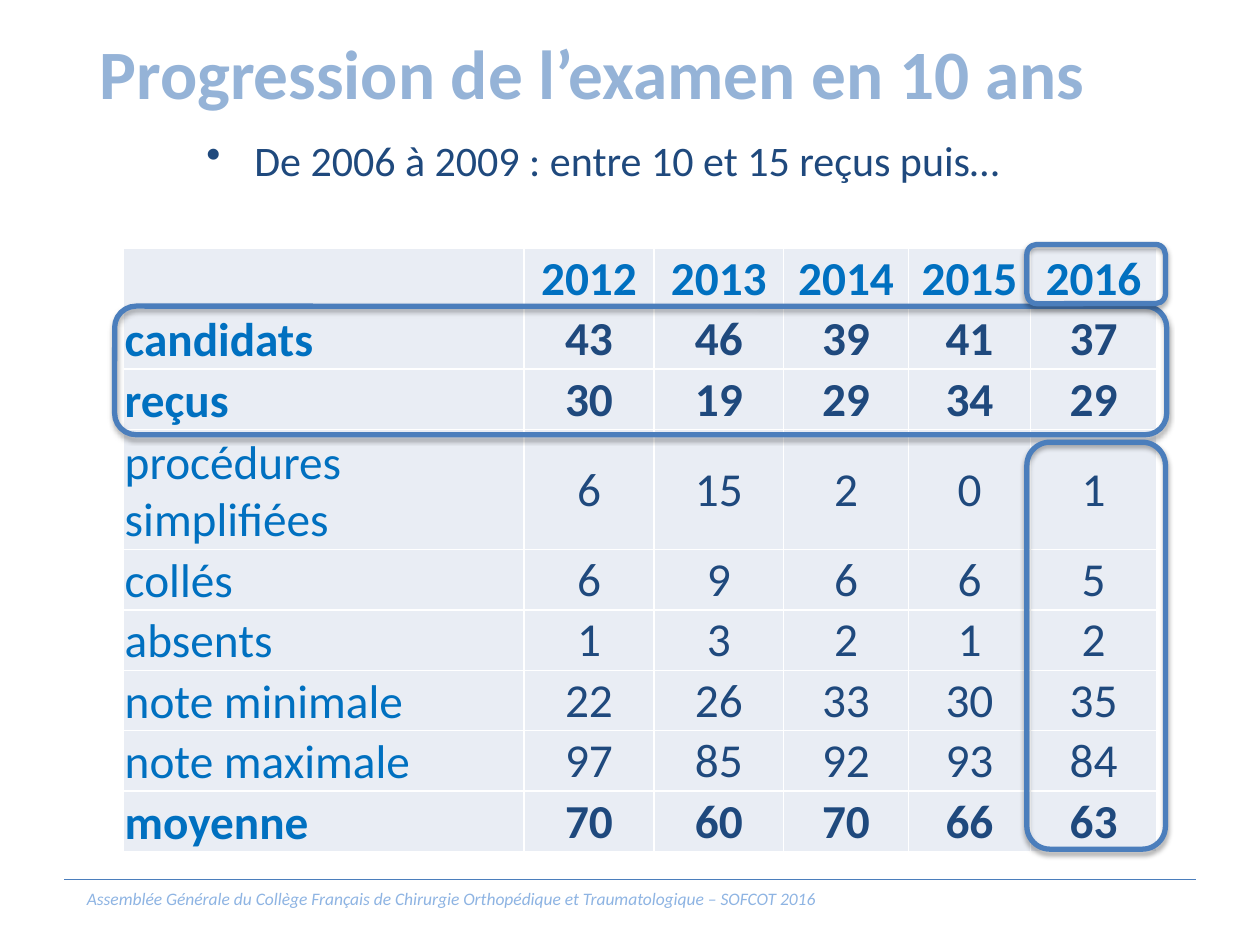
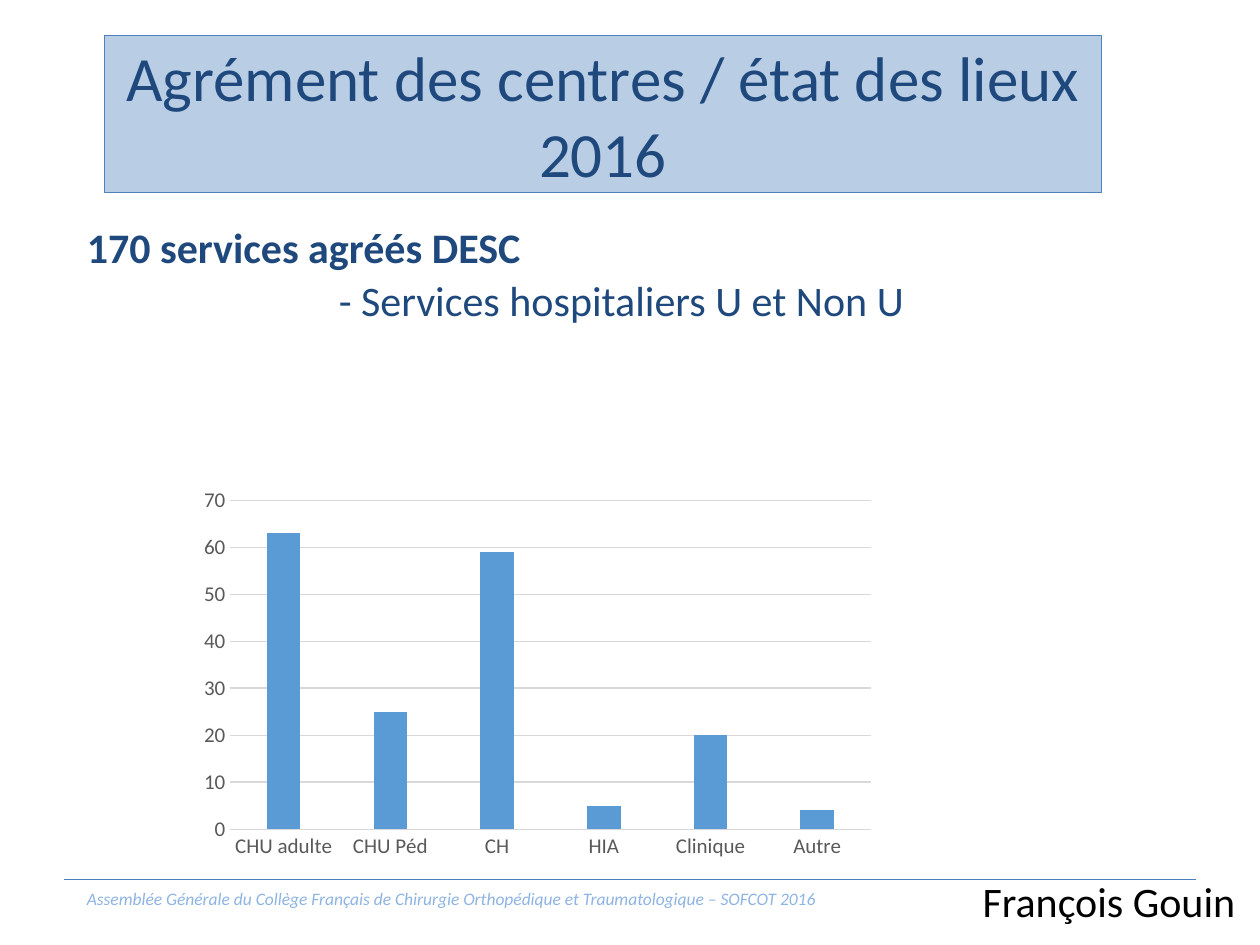
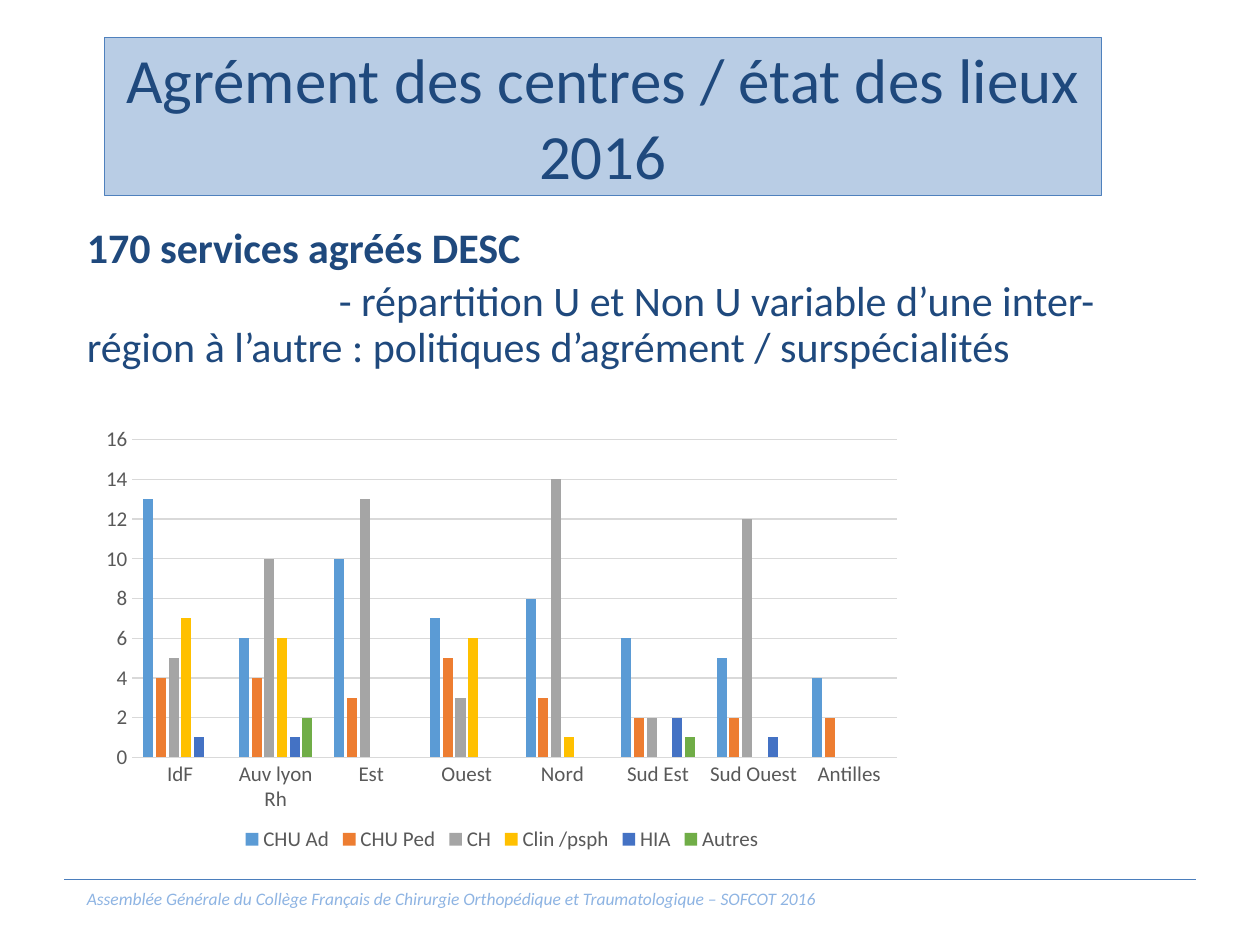
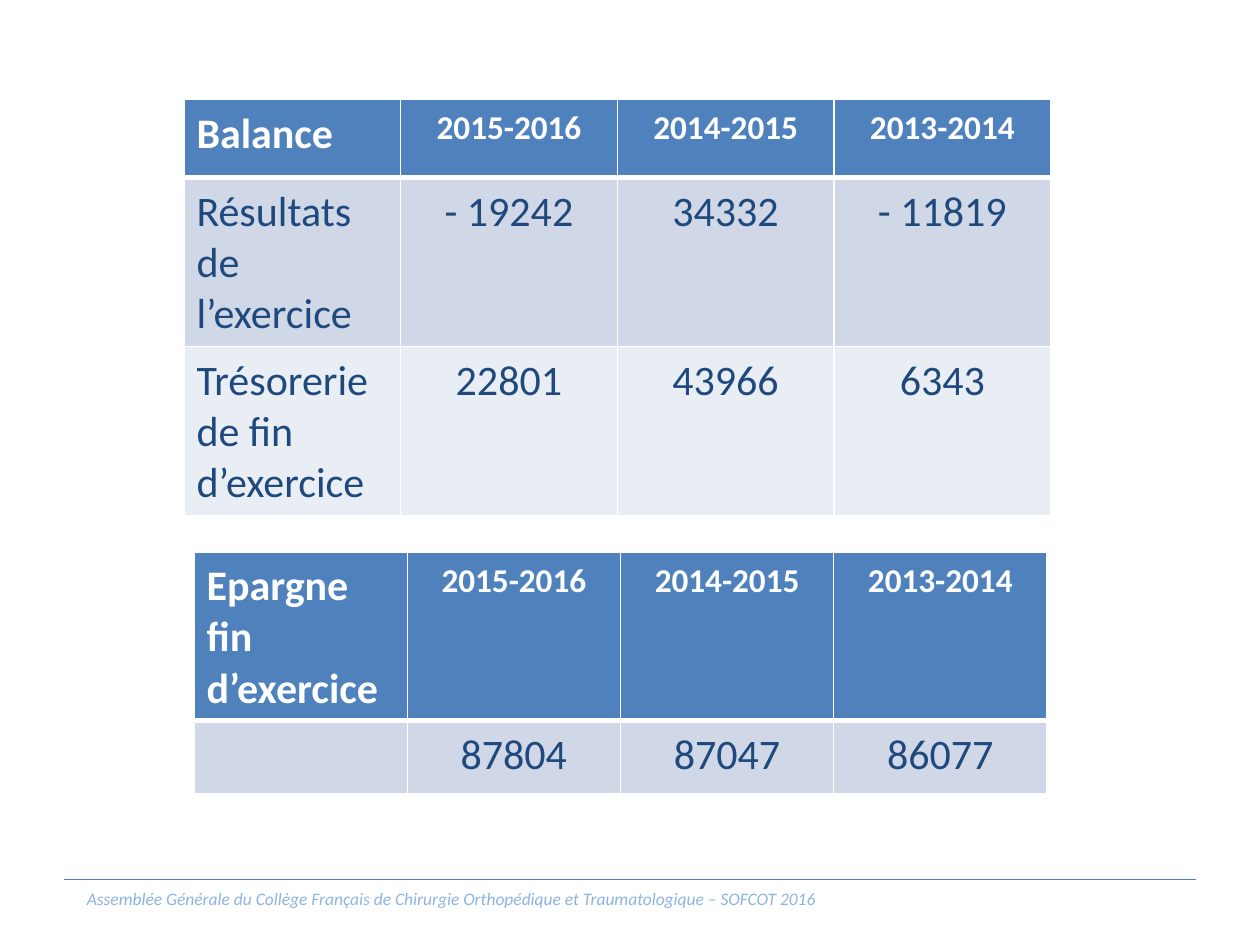
from lxml import etree
from pptx import Presentation
from pptx.chart.data import CategoryChartData
from pptx.dml.color import RGBColor
from pptx.enum.chart import XL_CHART_TYPE as ChartType, XL_LEGEND_POSITION as LegendPosition
from pptx.enum.chart import XL_TICK_MARK as TickMark
from pptx.enum.shapes import MSO_CONNECTOR as Connector, MSO_SHAPE as Shape
from pptx.enum.text import MSO_ANCHOR as Anchor, PP_ALIGN as Align
from pptx.oxml import parse_xml
from pptx.oxml.ns import nsdecls, qn
from pptx.util import Inches, Pt

FONT = "Calibri"
COLORS = {
    "navy": "1F497D", "title": "95B3D7", "footer": "8EB4E3", "rule": "4B7EBC",
    "band": "B9CDE5", "accent": "4F81BD", "label": "0070C0", "white": "FFFFFF",
    "black": "000000", "row_dark": "D0D8E8", "row_light": "E9EDF4",
    "axis": "595959", "grid": "D9D9D9",
}
SERIES_COLORS = ["5B9BD5", "ED7D31", "A5A5A5", "FFC000", "4472C4", "70AD47"]
FOOTER = ("Assemblée Générale du Collège Français de Chirurgie Orthopédique "
          "et Traumatologique – SOFCOT 2016")
CENTERS_TITLE = "Agrément des centres / état des lieux 2016"
CENTERS_COUNT = "170 services agréés DESC"
YEARS = ["2015-2016", "2014-2015", "2013-2014"]


def rgb(name):
    return RGBColor.from_string(COLORS.get(name, name))


def box_lengths(box):
    return [Inches(length) for length in box]


def write_text(frame, text, size=24, color="navy", bold=False, italic=False,
               align=Align.LEFT, anchor=None, bullet=None, margin=0, indent=0,
               line_spacing=None, space_before=None):
    paragraph = frame.paragraphs[0]
    if paragraph.runs:
        paragraph = frame.add_paragraph()
    properties = paragraph._p.get_or_add_pPr()
    properties.set("marL", str(Inches(margin)))
    properties.set("indent", str(Inches(indent)))
    if bullet:
        etree.SubElement(properties, qn("a:buChar"), char=bullet)
    paragraph.alignment = align
    paragraph.line_spacing = line_spacing
    paragraph.space_before = space_before
    if anchor is not None:
        frame.vertical_anchor = anchor
    run = paragraph.add_run()
    run.text = text
    font = run.font
    font.name, font.size, font.bold, font.italic = FONT, Pt(size), bold, italic
    font.color.rgb = rgb(color)


def add_text_box(slide, box, wrap=True):
    frame = slide.shapes.add_textbox(*box_lengths(box)).text_frame
    frame.word_wrap = wrap
    return frame


def add_footer(slide, box):
    left, top, width, height = box
    rule = slide.shapes.add_connector(
        Connector.STRAIGHT, *box_lengths((left, top, left + width, top)))
    rule.line.color.rgb = rgb("rule")
    rule.line.width = Pt(0.75)
    etree.SubElement(rule._element.spPr, qn("a:effectLst"))
    frame = add_text_box(slide, (left, top + 0.02, 6.14, height))
    write_text(frame, FOOTER, size=10, color="footer", italic=True, align=Align.CENTER)


def new_slide(presentation):
    slide = presentation.slides.add_slide(presentation.slide_layouts[6])
    add_footer(slide, (0.51, 6.98, 8.98, 0.27))
    return slide


def add_title_band(slide, box):
    band = slide.shapes.add_shape(Shape.RECTANGLE, *box_lengths(box))
    band.shadow.inherit = False
    band.fill.solid()
    band.fill.fore_color.rgb = rgb("band")
    band.line.color.rgb = rgb("accent")
    band.line.width = Pt(0.75)
    write_text(band.text_frame, CENTERS_TITLE, size=36, align=Align.CENTER, anchor=Anchor.MIDDLE)


def add_findings(slide, box, detail):
    frame = add_text_box(slide, box)
    write_text(frame, CENTERS_COUNT, bold=True, line_spacing=0.9)
    write_text(frame, detail, indent=2, line_spacing=0.9, space_before=Pt(4.8))


def add_highlight(slide, box):
    outline = slide.shapes.add_shape(Shape.ROUNDED_RECTANGLE, *box_lengths(box))
    outline.fill.background()
    outline.line.color.rgb = rgb("rule")
    outline.line.width = Pt(3)
    outline.shadow.inherit = False
    effects = outline._element.spPr.find(qn("a:effectLst"))
    effects.append(parse_xml(
        f'<a:outerShdw {nsdecls("a")} blurRad="{Pt(3.1)}" dist="{Pt(1.8)}" dir="5400000" '
        f'rotWithShape="0"><a:srgbClr val="{COLORS["black"]}"><a:alpha val="35000"/>'
        '</a:srgbClr></a:outerShdw>'))


def style_cell(cell, fill, insets, bottom_border=1):
    properties = cell._tc.get_or_add_tcPr()
    for side in "LRTB":
        width = bottom_border if side == "B" else 1
        border = etree.SubElement(properties, qn(f"a:ln{side}"), w=str(Pt(width)))
        solid = etree.SubElement(border, qn("a:solidFill"))
        etree.SubElement(solid, qn("a:srgbClr"), val=COLORS["white"])
    cell.fill.solid()
    cell.fill.fore_color.rgb = rgb(fill)
    (cell.margin_left, cell.margin_top,
     cell.margin_right, cell.margin_bottom) = box_lengths(insets)


def add_grid(slide, box, column_widths, row_heights):
    table = slide.shapes.add_table(
        len(row_heights), len(column_widths), *box_lengths(box)).table
    table.first_row = table.horz_banding = False
    for column, width in zip(table.columns, column_widths):
        column.width = Inches(width)
    for row, height in zip(table.rows, row_heights):
        row.height = Inches(height)
    return table


def add_exam_table(slide, box):
    rows = [
        ["", 2012, 2013, 2014, 2015, 2016],
        ["candidats", 43, 46, 39, 41, 37],
        ["reçus", 30, 19, 29, 34, 29],
        ["procédures simplifiées", 6, 15, 2, 0, 1],
        ["collés", 6, 9, 6, 6, 5],
        ["absents", 1, 3, 2, 1, 2],
        ["note minimale", 22, 26, 33, 30, 35],
        ["note maximale", 97, 85, 92, 93, 84],
        ["moyenne", 70, 60, 70, 66, 63],
    ]
    bold_rows = {0, 1, 2, len(rows) - 1}
    heights = [0.95 if row[0] == "procédures simplifiées" else 0.48 for row in rows]
    table = add_grid(slide, box, [3.18, 1.03, 1.03, 0.99, 0.97, 1], heights)
    for row_index, row in enumerate(rows):
        for column_index, value in enumerate(row):
            cell = table.cell(row_index, column_index)
            style_cell(cell, "row_light", (0.01, 0.01, 0.01, 0))
            is_label = column_index == 0
            if value != "":
                write_text(cell.text_frame, str(value), size=27, bold=row_index in bold_rows,
                           color="label" if is_label or row_index == 0 else "navy",
                           align=Align.LEFT if is_label else Align.CENTER)
                cell.vertical_anchor = Anchor.BOTTOM if is_label else Anchor.MIDDLE


def add_finance_table(slide, box, rows, row_heights):
    table = add_grid(slide, box, [box[2] / 4] * 4, row_heights)
    fills = ["accent", "row_dark", "row_light"]
    for row_index, row in enumerate(rows):
        is_header = row_index == 0
        for column_index, value in enumerate(row):
            cell = table.cell(row_index, column_index)
            style_cell(cell, fills[row_index], (0.1, 0.07, 0.1, 0.07), 3 if is_header else 1)
            if value:
                write_text(cell.text_frame, value, bold=is_header,
                           size=19 if is_header and column_index else 24,
                           color="white" if is_header else "navy",
                           align=Align.CENTER if column_index else Align.LEFT)


def style_font(font, size):
    font.name, font.size = FONT, Pt(size)
    font.color.rgb = rgb("axis")


def add_column_chart(slide, box, categories, series, maximum, step, plot_area=None):
    data = CategoryChartData()
    data.categories = categories
    for name, values in series.items():
        data.add_series(name, values)
    chart = slide.shapes.add_chart(ChartType.COLUMN_CLUSTERED, *box_lengths(box), data).chart
    style_font(chart.font, 12)
    chart.has_title = False
    chart.has_legend = len(series) > 1
    if chart.has_legend:
        chart.legend.position = LegendPosition.BOTTOM
        chart.legend.include_in_layout = False
        style_font(chart.legend.font, 12)
    plot = chart.plots[0]
    plot.gap_width, plot.overlap, plot.vary_by_categories = 219, -27, False
    for column_series, color in zip(plot.series, SERIES_COLORS):
        column_series.format.fill.solid()
        column_series.format.fill.fore_color.rgb = rgb(color)
    category_axis, value_axis = chart.category_axis, chart.value_axis
    for axis in (category_axis, value_axis):
        axis.major_tick_mark = axis.minor_tick_mark = TickMark.NONE
        style_font(axis.tick_labels.font, 12)
    value_axis.minimum_scale, value_axis.maximum_scale = 0, maximum
    value_axis.major_unit = step
    value_axis.format.line.fill.background()
    for line in (category_axis.format.line, value_axis.major_gridlines.format.line):
        line.color.rgb = rgb("grid")
        line.width = Pt(0.75)
    if plot_area:
        place_plot_area(chart, plot_area)


def place_plot_area(chart, fractions):
    area = chart._chartSpace.find(f".//{qn('c:plotArea')}")
    for old_layout in area.findall(qn("c:layout")):
        area.remove(old_layout)
    layout = etree.Element(qn("c:layout"))
    manual = etree.SubElement(layout, qn("c:manualLayout"))
    settings = [("layoutTarget", "inner"), ("xMode", "edge"), ("yMode", "edge")]
    settings += zip("xywh", fractions)
    for tag, value in settings:
        etree.SubElement(manual, qn(f"c:{tag}"), val=str(value))
    area.insert(0, layout)


def build_exam_slide(presentation):
    slide = new_slide(presentation)
    title = add_text_box(slide, (0.43, 0, 8.54, 1.14))
    write_text(title, "Progression de l’examen en 10 ans", size=39.6, color="title",
               bold=True, align=Align.CENTER, anchor=Anchor.MIDDLE)
    body = add_text_box(slide, (1.54, 1.02, 7.79, 1.7))
    write_text(body, "De 2006 à 2009 : entre 10 et 15 reçus puis…",
               bullet="•", margin=0.38, indent=-0.38)
    add_exam_table(slide, (0.98, 1.97, 8.2, 4.79))
    for box in [(0.91, 2.43, 8.35, 1.02), (8.15, 3.51, 1.1, 3.23), (8.15, 1.94, 1.1, 0.47)]:
        add_highlight(slide, box)


def build_center_types_slide(presentation):
    slide = new_slide(presentation)
    add_title_band(slide, (0.83, 0.28, 7.91, 1.25))
    speaker = add_text_box(slide, (7.7, 6.9, 2.24, 0.51), wrap=False)
    write_text(speaker, "François Gouin", color="black")
    add_column_chart(slide, (1.51, 3.81, 5.51, 3.07),
                     ["CHU adulte", "CHU Péd", "CH", "HIA", "Clinique", "Autre"],
                     {"Series 1": [63, 25, 59, 5, 20, 4]}, maximum=70, step=10)
    add_findings(slide, (0.59, 1.75, 8.95, 1.68), "- Services hospitaliers U et Non U")


def build_regions_slide(presentation):
    slide = new_slide(presentation)
    add_title_band(slide, (0.83, 0.3, 7.91, 1.25))
    regions = ["IdF", "Auv lyon Rh", "Est", "Ouest", "Nord", "Sud Est", "Sud Ouest", "Antilles"]
    series = {
        "CHU Ad": [13, 6, 10, 7, 8, 6, 5, 4],
        "CHU Ped": [4, 4, 3, 5, 3, 2, 2, 2],
        "CH": [5, 10, 13, 3, 14, 2, 12, None],
        "Clin /psph": [7, 6, None, 6, 1, None, None, None],
        "HIA": [1, 1, None, None, None, 2, 1, None],
        "Autres": [None, 2, None, None, None, 1, None, None],
    }
    add_column_chart(slide, (0.65, 2.86, 6.67, 3.94), regions, series, maximum=16, step=2,
                     plot_area=(0.06, 0.16, 0.91, 0.64))
    add_findings(slide, (0.59, 1.75, 8.95, 1.68),
                 "- répartition U et Non U variable d’une inter-région à l’autre : "
                 "politiques d’agrément / surspécialités")


def build_finance_slide(presentation):
    slide = new_slide(presentation)
    add_finance_table(slide, (1.46, 0.79, 6.88, 3.28), [
        ["Balance", *YEARS],
        ["Résultats de l’exercice", "- 19242", "34332", "- 11819"],
        ["Trésorerie de fin d’exercice", "22801", "43966", "6343"],
    ], [0.62, 1.33, 1.33])
    add_finance_table(slide, (1.54, 4.38, 6.77, 1.91), [
        ["Epargne fin d’exercice", *YEARS],
        ["", "87804", "87047", "86077"],
    ], [1.33, 0.58])


def main():
    presentation = Presentation()
    presentation.slide_width, presentation.slide_height = Inches(10), Inches(7.5)
    build_exam_slide(presentation)
    build_center_types_slide(presentation)
    build_regions_slide(presentation)
    build_finance_slide(presentation)
    presentation.save("out.pptx")


if __name__ == "__main__":
    main()
